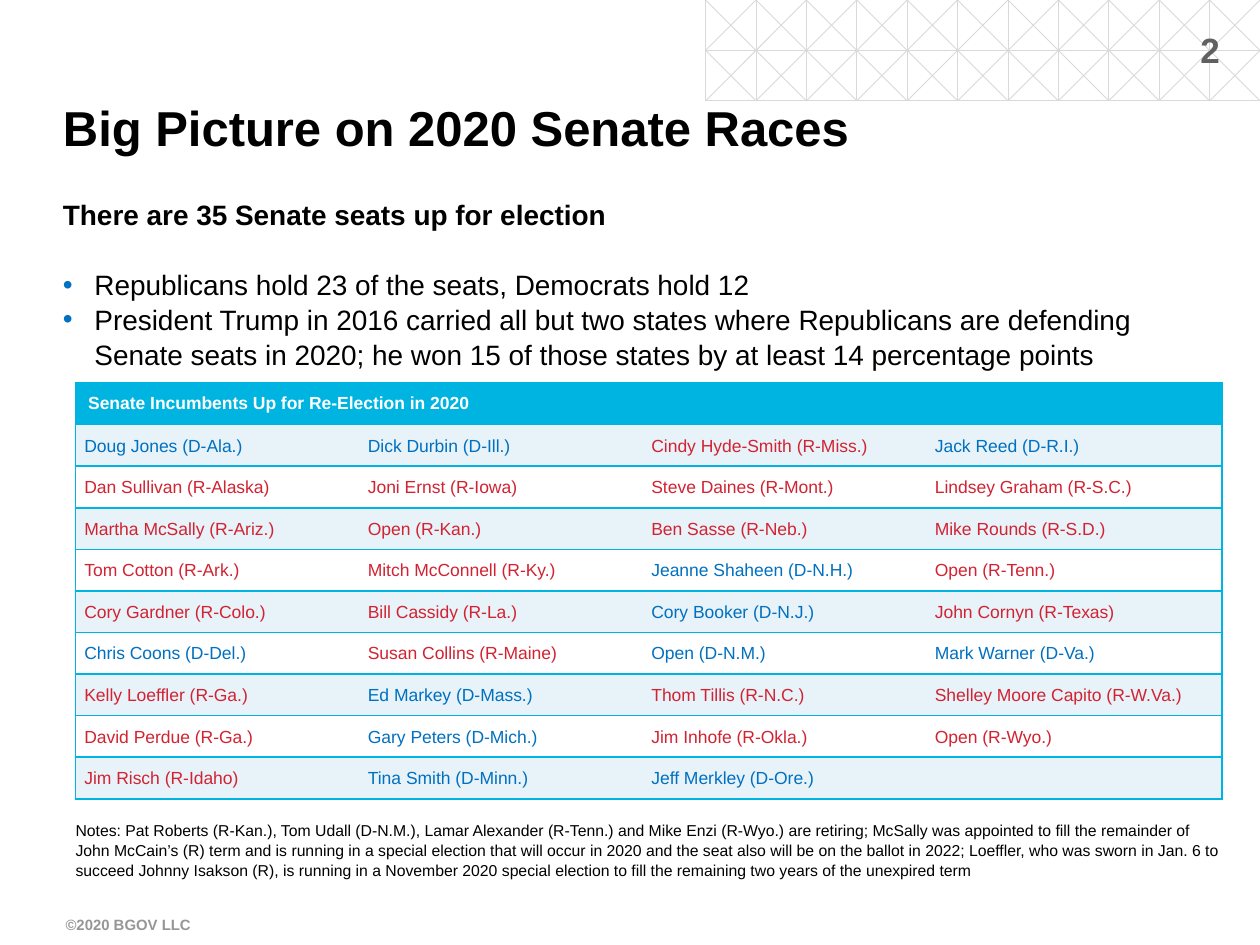
from lxml.etree import SubElement
from pptx import Presentation
from pptx.dml.color import RGBColor
from pptx.enum.shapes import MSO_CONNECTOR
from pptx.enum.text import MSO_ANCHOR, PP_ALIGN
from pptx.oxml import parse_xml
from pptx.oxml.ns import nsdecls, qn
from pptx.util import Inches, Pt

BLACK = RGBColor(0x00, 0x00, 0x00)
WHITE = RGBColor(0xFF, 0xFF, 0xFF)
GRID = RGBColor(0xD9, 0xD9, 0xD9)
DARK = RGBColor(0x60, 0x60, 0x60)
GRAY = RGBColor(0x96, 0x96, 0x96)
CYAN = RGBColor(0x00, 0xB4, 0xE1)
PALE = RGBColor(0xE7, 0xF2, 0xF9)
BLUE = RGBColor(0x00, 0x70, 0xC0)
RED = RGBColor(0xD2, 0x23, 0x32)

NO_STYLE = "{2D5ABB26-0587-4C30-8999-92F81FD0307C}"
HEAD = "Senate Incumbents Up for Re-Election in 2020"
SEATS = [
    ["Doug Jones (D-Ala.)", "Dick Durbin (D-Ill.)",
     "Cindy Hyde-Smith (R-Miss.)", "Jack Reed (D-R.I.)"],
    ["Dan Sullivan (R-Alaska)", "Joni Ernst (R-Iowa)",
     "Steve Daines (R-Mont.)", "Lindsey Graham (R-S.C.)"],
    ["Martha McSally (R-Ariz.)", "Open (R-Kan.)",
     "Ben Sasse (R-Neb.)", "Mike Rounds (R-S.D.)"],
    ["Tom Cotton (R-Ark.)", "Mitch McConnell (R-Ky.)",
     "Jeanne Shaheen (D-N.H.)", "Open (R-Tenn.)"],
    ["Cory Gardner (R-Colo.)", "Bill Cassidy (R-La.)",
     "Cory Booker (D-N.J.)", "John Cornyn (R-Texas)"],
    ["Chris Coons (D-Del.)", "Susan Collins (R-Maine)",
     "Open (D-N.M.)", "Mark Warner (D-Va.)"],
    ["Kelly Loeffler (R-Ga.)", "Ed Markey (D-Mass.)",
     "Thom Tillis (R-N.C.)", "Shelley Moore Capito (R-W.Va.)"],
    ["David Perdue (R-Ga.)", "Gary Peters (D-Mich.)",
     "Jim Inhofe (R-Okla.)", "Open (R-Wyo.)"],
    ["Jim Risch (R-Idaho)", "Tina Smith (D-Minn.)",
     "Jeff Merkley (D-Ore.)", ""],
]
NOTES = (
    "Notes: Pat Roberts (R-Kan.), Tom Udall (D-N.M.), Lamar Alexander "
    "(R-Tenn.) and Mike Enzi (R-Wyo.) are retiring; McSally was appointed "
    "to fill the remainder of John McCain’s (R) term and is running in a "
    "special election that will occur in 2020 and the seat also will be on "
    "the ballot in 2022; Loeffler, who was sworn in Jan. 6 to succeed Johnny "
    "Isakson (R), is running in a November 2020 special election to fill the "
    "remaining two years of the unexpired term"
)


def write(para, text, size=10, color=BLACK, bold=False, align=PP_ALIGN.LEFT,
          space=None, before=0, bullet=None):
    """Fill one paragraph with formatted text."""
    para.alignment = align
    para.space_before = Pt(before)
    if space:
        para.line_spacing = space
    if bullet:
        props = para._p.get_or_add_pPr()
        props.set("marL", str(Inches(0.25)))
        props.set("indent", str(-Inches(0.25)))
        tint = SubElement(props, qn("a:buClr"))
        SubElement(tint, qn("a:srgbClr"), val=str(bullet))
        SubElement(props, qn("a:buFont"), typeface="Arial")
        SubElement(props, qn("a:buChar"), char="•")
    run = para.add_run()
    run.text = text
    font = run.font
    font.name, font.size, font.bold = "Arial", Pt(size), bold
    font.color.rgb = color


def add_box(slide, x, y, w, h, anchor=MSO_ANCHOR.TOP, top=0.05, bottom=0.05):
    box = slide.shapes.add_textbox(Inches(x), Inches(y), Inches(w), Inches(h))
    frame = box.text_frame
    frame.word_wrap = True
    frame.vertical_anchor = anchor
    frame.margin_left = frame.margin_right = 0
    frame.margin_top, frame.margin_bottom = Inches(top), Inches(bottom)
    return frame


def add_line(slide, x1, y1, x2, y2):
    line = slide.shapes.add_connector(
        MSO_CONNECTOR.STRAIGHT, Inches(x1), Inches(y1), Inches(x2), Inches(y2))
    line.line.color.rgb = GRID
    line.line.width = Pt(0.5)
    SubElement(line._element.spPr, qn("a:effectLst"))


def add_grid(slide):
    left, right, step = 5.6, 10, 0.4
    deep = 2 * step
    for y in (step, deep):
        add_line(slide, left, y, right, y)
    for i in range(11):
        x = left + i * step
        add_line(slide, x, 0, x, deep)
    for i in range(10):
        x = left + i * step
        add_line(slide, x, 0, x + deep, deep)
        add_line(slide, x + deep, 0, x, deep)
    # Half diagonals that close the two ends
    for edge, inner in ((left, left + step), (right, right - step)):
        add_line(slide, inner, 0, edge, step)
        add_line(slide, edge, step, inner, deep)


def set_edge(cell, sides):
    """Draw cyan borders on the given sides, in the order L, R, T, B."""
    props = cell._tc.get_or_add_tcPr()
    for i, side in enumerate(sides):
        props.insert(i, parse_xml(
            f'<a:ln{side} {nsdecls("a")} w="{Pt(1)}"><a:solidFill>'
            f'<a:srgbClr val="{CYAN}"/></a:solidFill></a:ln{side}>'))


def set_cell(cell, fill, side, top):
    cell.fill.solid()
    cell.fill.fore_color.rgb = fill
    cell.vertical_anchor = MSO_ANCHOR.MIDDLE
    cell.margin_left = cell.margin_right = Inches(side)
    cell.margin_top = cell.margin_bottom = Inches(top)


def add_seats(slide):
    rows, cols = len(SEATS) + 1, len(SEATS[0])
    table = slide.shapes.add_table(
        rows, cols, Inches(0.6), Inches(3.04), Inches(9.1), Inches(3.3)).table
    table._tbl.tblPr.find(qn("a:tableStyleId")).text = NO_STYLE
    table.first_row = table.horz_banding = False
    for col, width in zip(table.columns, (2.25, 2.25, 2.25, 2.35)):
        col.width = Inches(width)
    for row in table.rows:
        row.height = Inches(0.33)

    # Header across all columns
    head = table.cell(0, 0)
    head.merge(table.cell(0, cols - 1))
    set_cell(head, CYAN, 0.1, 0.04)
    set_edge(head, "LRTB")
    write(head.text_frame.paragraphs[0], HEAD, color=WHITE, bold=True)

    # Names, coloured by party
    for r, names in enumerate(SEATS, 1):
        for c, name in enumerate(names):
            cell = table.cell(r, c)
            set_cell(cell, PALE if r % 2 else WHITE, 0.07, 0)
            ends = "L" if c == 0 else "R" if c == cols - 1 else ""
            set_edge(cell, ends + "TB")
            if name:
                write(cell.text_frame.paragraphs[0], name, space=1.07,
                      color=BLUE if "(D-" in name else RED)


def main():
    deck = Presentation()
    deck.slide_width, deck.slide_height = Inches(10), Inches(7.5)
    slide = deck.slides.add_slide(deck.slide_layouts[6])

    # Corner pattern, page number and footer
    add_grid(slide)
    page = add_box(slide, 9.34, 0.2, 0.53, 0.38, MSO_ANCHOR.MIDDLE, 0, 0)
    write(page.paragraphs[0], "2", size=20, color=DARK, bold=True,
          align=PP_ALIGN.CENTER)
    foot = add_box(slide, 0.52, 7.22, 2.21, 0.28)
    write(foot.paragraphs[0], "©2020 BGOV LLC", size=8.5, color=GRAY,
          bold=True)

    # Title
    title = add_box(slide, 0.5, 0.75, 9, 0.52, MSO_ANCHOR.MIDDLE, 0, 0)
    write(title.paragraphs[0], "Big Picture on 2020 Senate Races", size=28,
          bold=True)

    # Lead and bullets
    body = add_box(slide, 0.5, 1.51, 9.2, 0.97)
    write(body.paragraphs[0], "There are 35 Senate seats up for election",
          size=16, bold=True, space=1.04)
    write(body.add_paragraph(),
          "Republicans hold 23 of the seats, Democrats hold 12",
          size=16, space=1.04, before=20, bullet=BLUE)
    write(body.add_paragraph(),
          "President Trump in 2016 carried all but two states where "
          "Republicans are defending Senate seats in 2020; he won 15 of "
          "those states by at least 14 percentage points",
          size=16, space=1.04, bullet=BLUE)

    # Table and notes
    add_seats(slide)
    notes = add_box(slide, 0.6, 6.51, 9.1, 0.47, MSO_ANCHOR.BOTTOM, 0, 0)
    write(notes.paragraphs[0], NOTES, size=9, space=1.04)

    deck.save("out.pptx")


if __name__ == "__main__":
    main()
